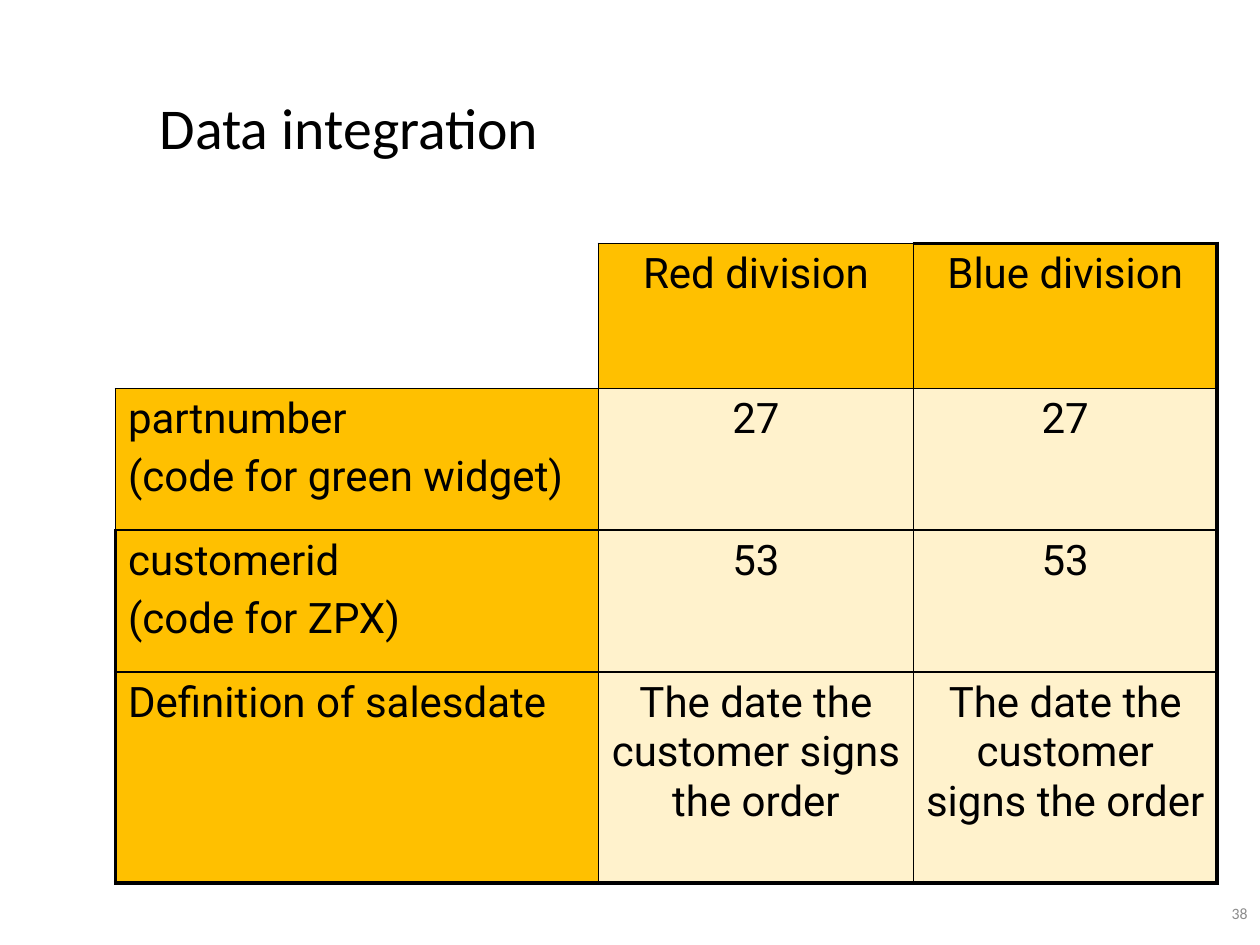
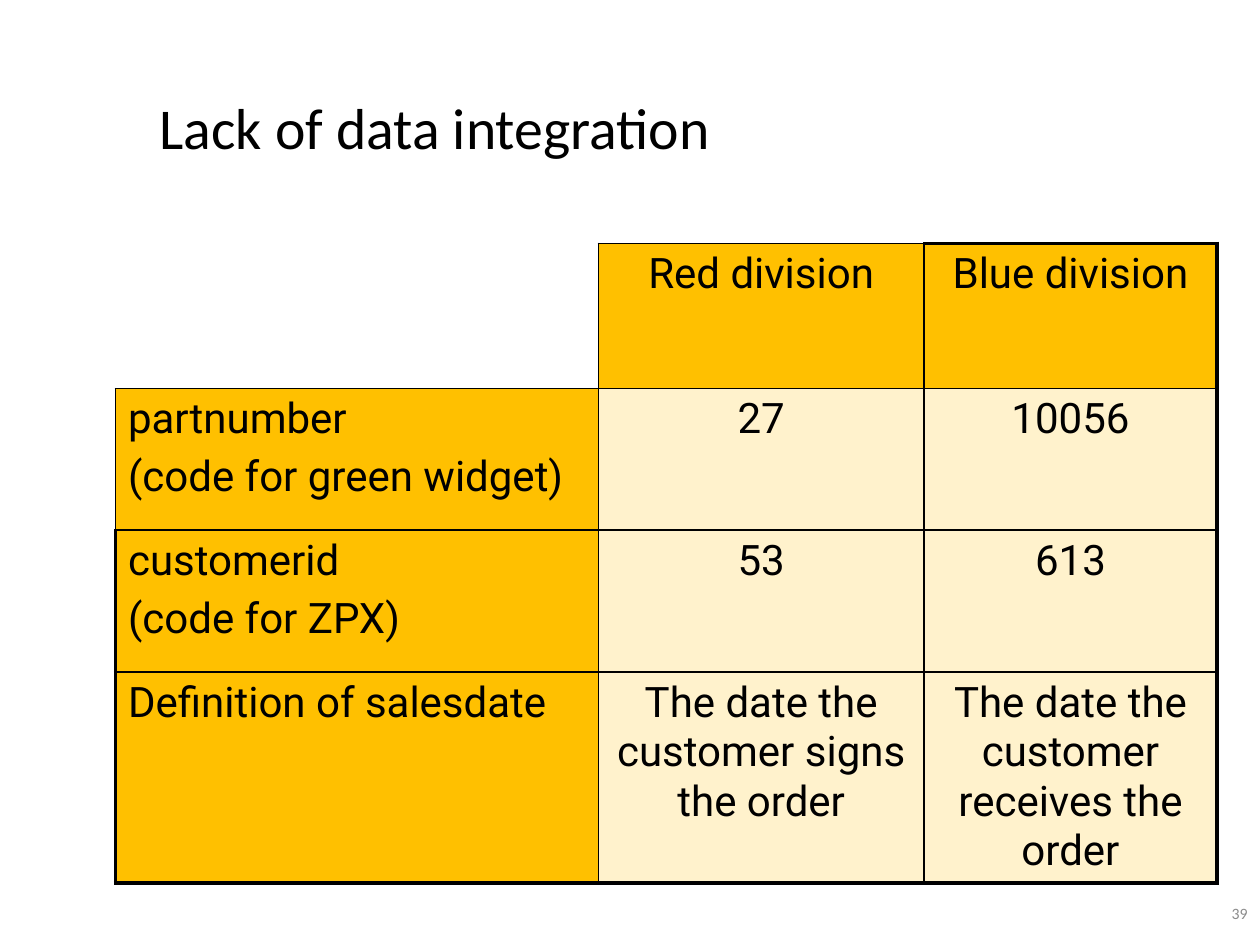
from dataclasses import dataclass

from lxml.etree import SubElement
from pptx import Presentation
from pptx.dml.color import RGBColor
from pptx.enum.text import MSO_ANCHOR as Anchor, PP_ALIGN as Align
from pptx.oxml.ns import qn
from pptx.util import Pt

COLUMNS = ["", "Red division", "Blue division"]
ROW_LABELS = [
    ["partnumber", "(code for green widget)"],
    ["customerid", "(code for ZPX)"],
    ["Definition of salesdate"],
]
SIGNED = "The date the customer signs the order"
RECEIVED = "The date the customer receives the order"

SLIDES = [
    {
        "title": "Data integration",
        "number": "38",
        "red": ["27", "53", SIGNED],
        "blue": ["27", "53", SIGNED],
        "red_width": 180,
    },
    {
        "title": "Lack of data integration",
        "number": "39",
        "red": ["27", "53", SIGNED],
        "blue": ["10056", "613", RECEIVED],
        "red_width": 186,
    },
]


@dataclass(frozen=True)
class Theme:
    black: str = "000000"
    gray: str = "8C8C8C"
    header_fill: str = "FFC000"
    value_fill: str = "FFF2CC"
    title_font: str = "Calibri"
    table_font: str = "Roboto"
    title_size: float = 33
    table_size: float = 24
    number_size: float = 9
    thin: float = 1
    thick: float = 2.25


THEME = Theme()
TITLE_BOX = (84, 30, 612, 90)
NUMBER_BOX = (654, 504, 66, 36)
TABLE_LEFT, TABLE_TOP, TABLE_WIDTH = 66, 139, 629.5
LABEL_WIDTH = 276
ROW_HEIGHTS = [83, 81, 81, 120.5]
LINE_GAP = 0.2 * THEME.table_size

TITLE_STYLE = {"name": THEME.title_font, "size": Pt(THEME.title_size)}
TABLE_STYLE = {"name": THEME.table_font, "size": Pt(THEME.table_size)}
NUMBER_STYLE = {"name": THEME.title_font, "size": Pt(THEME.number_size)}


def points(box):
    return [Pt(length) for length in box]


def write(frame, lines, style, align, color=THEME.black):
    frame.text = "\n".join(lines)
    for index, paragraph in enumerate(frame.paragraphs):
        paragraph.alignment = align
        if index:
            paragraph.space_before = Pt(LINE_GAP)
        for run in paragraph.runs:
            for name, value in style.items():
                setattr(run.font, name, value)
            run.font.color.rgb = RGBColor.from_string(color)


def border_widths(row, column):
    last_row, last_column = len(ROW_LABELS), len(COLUMNS) - 1
    corner = row == 0 and column == 0
    thick_edges = {
        "L": column == 0 and row > 1,
        "R": column == last_column,
        "T": row == 0 and column == last_column,
        "B": row == last_row,
    }
    return {
        edge: 0 if corner and edge in "LT" else THEME.thick if thick else THEME.thin
        for edge, thick in thick_edges.items()
    }


def draw_borders(cell, widths):
    properties = cell._tc.get_or_add_tcPr()
    for position, (edge, width) in enumerate(widths.items()):
        line = SubElement(properties, qn(f"a:ln{edge}"), w=str(Pt(width)))
        if width:
            fill = SubElement(line, qn("a:solidFill"))
            SubElement(fill, qn("a:srgbClr"), val=THEME.black)
        else:
            SubElement(line, qn("a:noFill"))
        properties.insert(position, line)


def fill_cell(cell, row, column, lines):
    header = row == 0 or column == 0
    if row == column == 0:
        cell.fill.background()
    else:
        cell.fill.solid()
        color = THEME.header_fill if header else THEME.value_fill
        cell.fill.fore_color.rgb = RGBColor.from_string(color)
    write(cell.text_frame, lines, TABLE_STYLE, Align.CENTER if column else Align.LEFT)
    draw_borders(cell, border_widths(row, column))


def add_division_table(slide, content):
    rows = [[[name] for name in COLUMNS]]
    for label, red, blue in zip(ROW_LABELS, content["red"], content["blue"]):
        rows.append([label, [red], [blue]])
    box = (TABLE_LEFT, TABLE_TOP, TABLE_WIDTH, sum(ROW_HEIGHTS))
    table = slide.shapes.add_table(len(rows), len(COLUMNS), *points(box)).table
    table.first_row = table.horz_banding = False
    red_width = content["red_width"]
    widths = [LABEL_WIDTH, red_width, TABLE_WIDTH - LABEL_WIDTH - red_width]
    for column, width in zip(table.columns, widths):
        column.width = Pt(width)
    for row, height in zip(table.rows, ROW_HEIGHTS):
        row.height = Pt(height)
    for row, cells in enumerate(rows):
        for column, lines in enumerate(cells):
            fill_cell(table.cell(row, column), row, column, lines)


def add_title(slide, text):
    title = slide.shapes.title
    title.left, title.top, title.width, title.height = points(TITLE_BOX)
    title.text_frame.vertical_anchor = Anchor.MIDDLE
    write(title.text_frame, [text], TITLE_STYLE, Align.LEFT)
    title.text_frame.paragraphs[0].line_spacing = 0.9


def add_number(slide, text):
    frame = slide.shapes.add_textbox(*points(NUMBER_BOX)).text_frame
    frame.word_wrap = True
    frame.vertical_anchor = Anchor.MIDDLE
    write(frame, [text], NUMBER_STYLE, Align.RIGHT, THEME.gray)


def main():
    presentation = Presentation()
    presentation.slide_width, presentation.slide_height = Pt(720), Pt(540)
    title_only = presentation.slide_layouts.get_by_name("Title Only")
    for content in SLIDES:
        slide = presentation.slides.add_slide(title_only)
        add_title(slide, content["title"])
        add_division_table(slide, content)
        add_number(slide, content["number"])
    presentation.save("out.pptx")


if __name__ == "__main__":
    main()
